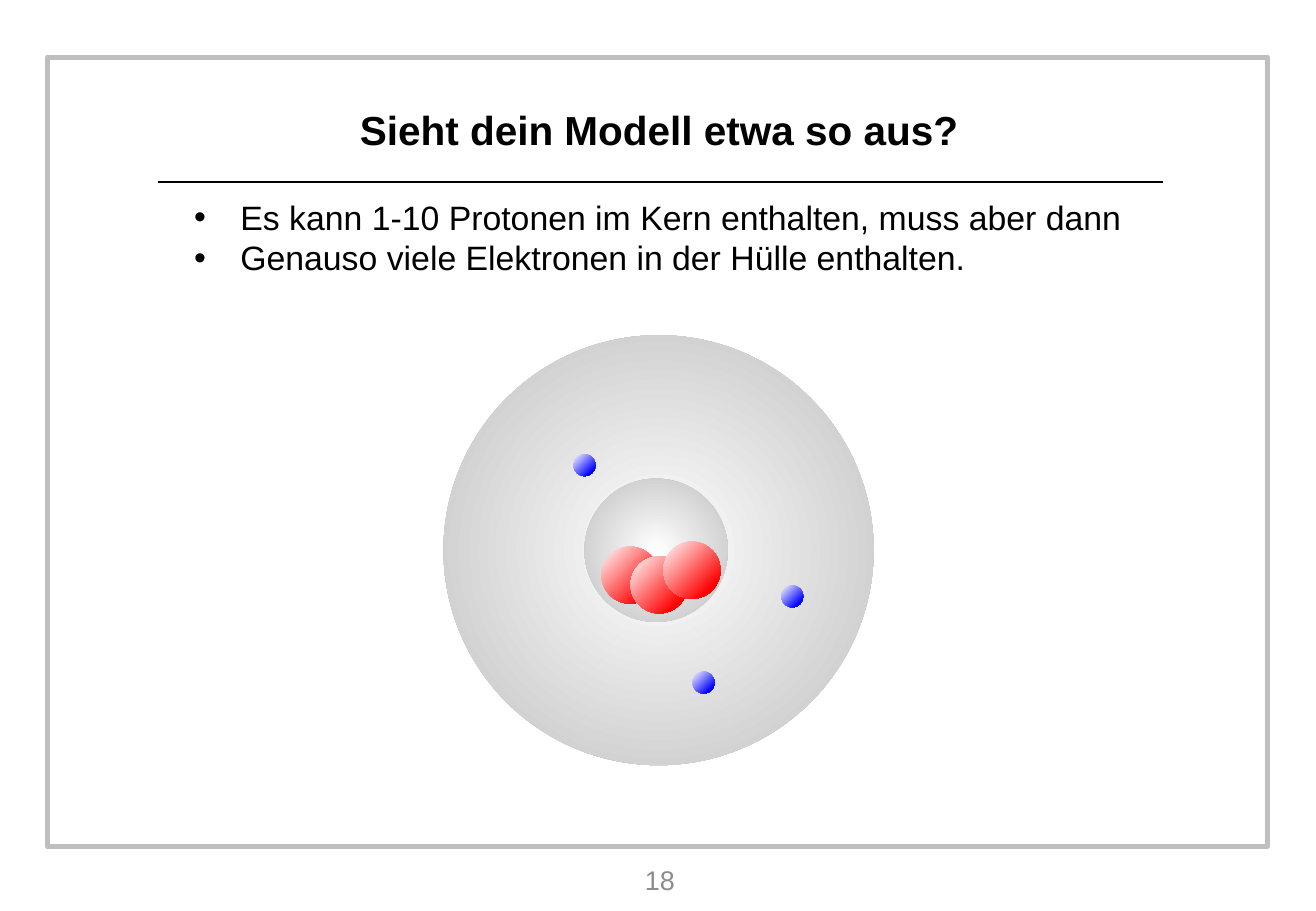
"""Builds a slide that shows a simple atom model with three protons and three electrons."""
from lxml.etree import SubElement as Sub
from pptx import Presentation
from pptx.dml.color import RGBColor as RGB
from pptx.enum.shapes import MSO_CONNECTOR as Link, MSO_SHAPE as Form
from pptx.enum.text import MSO_ANCHOR as Anchor, PP_ALIGN as Align
from pptx.oxml.ns import qn
from pptx.util import Inches, Pt

HUES = {"ink": "000000", "frame": "BFBFBF", "page": "8C8C8C", "white": "FFFFFF",
        "shell": "BFBFBF", "proton": "FF0000", "electron": "0000FF"}
FONT = "Arial"


def add_text(box, lines, size, hue, align, anchor, bold=False):
    area = slide.shapes.add_textbox(*map(Inches, box)).text_frame
    area.word_wrap = True
    area.vertical_anchor = anchor
    area.text = "\n".join(lines)
    for para in area.paragraphs:
        para.alignment = align
        para.font.name = FONT
        para.font.size = Pt(size)
        para.font.bold = bold
        para.font.color.rgb = RGB.from_string(HUES[hue])
    return area


def add_ball(left, top, size, stops, focus):
    ball = atom.shapes.add_shape(Form.OVAL, *map(Inches, (left, top, size, size)))
    ball.shadow.inherit = False
    ball.line.fill.background()
    ball.fill.gradient()
    for stop, (place, hue) in zip(ball.fill.gradient_stops, stops):
        stop.position = place
        stop.color.rgb = RGB.from_string(HUES[hue])
    grad = ball._element.spPr.find(qn("a:gradFill"))
    grad.remove(grad.find(qn("a:lin")))
    ring = Sub(grad, qn("a:path"), path="circle")
    Sub(ring, qn("a:fillToRect"), {side: f"{share}000" for side, share in zip("ltrb", focus)})


deck = Presentation()
deck.slide_width, deck.slide_height = Inches(10.83), Inches(7.5)
slide = deck.slides.add_slide(deck.slide_layouts[6])

frame = slide.shapes.add_shape(Form.RECTANGLE, *map(Inches, (0.39, 0.47, 10.04, 6.5)))
frame.shadow.inherit = False
frame.fill.background()
frame.line.color.rgb = RGB.from_string(HUES["frame"])
frame.line.width = Pt(3)

rule = slide.shapes.add_connector(Link.STRAIGHT, *map(Inches, (1.3, 1.5, 9.57, 1.5)))
rule.line.color.rgb = RGB.from_string(HUES["ink"])
rule.line.width = Pt(1.5)
Sub(rule._element.spPr, qn("a:effectLst"))

add_text((1.49, 0.67, 7.87, 0.79), ["Sieht dein Modell etwa so aus?"],
         24, "ink", Align.CENTER, Anchor.MIDDLE, True)
body = add_text((1.5, 1.57, 7.87, 4.72),
                ["Es kann 1-10 Protonen im Kern enthalten, muss aber dann",
                 "Genauso viele Elektronen in der Hülle enthalten."],
                20, "ink", Align.LEFT, Anchor.TOP)
for para in body.paragraphs:
    props = para._p.get_or_add_pPr()
    props.set("marL", str(Inches(0.38)))
    props.set("indent", str(Inches(-0.38)))
    dot = Sub(props, qn("a:buChar"), char="•")
    dot.addprevious(Sub(props, qn("a:buFont"), typeface=FONT))
    props.append(props.find(qn("a:defRPr")))
add_text((4.21, 7.05, 2.44, 0.39), ["18"], 16, "page", Align.CENTER, Anchor.MIDDLE)

atom = slide.shapes.add_group_shape()
for left, top, size in [(3.65, 2.76, 3.54), (4.81, 3.94, 1.18)]:
    add_ball(left, top, size, [(0, "white"), (1, "shell")], (50, 50, 50, 50))

parts = {"proton": (0.47, [(4.95, 4.5), (5.19, 4.58), (5.46, 4.46)]),
         "electron": (0.18, [(4.72, 3.74), (6.43, 4.82), (5.7, 5.53)])}
for kind, (size, spots) in parts.items():
    for left, top in spots:
        add_ball(left, top, size, [(0.17, kind), (1, "white")], (100, 100, 0, 0))

deck.save("out.pptx")
